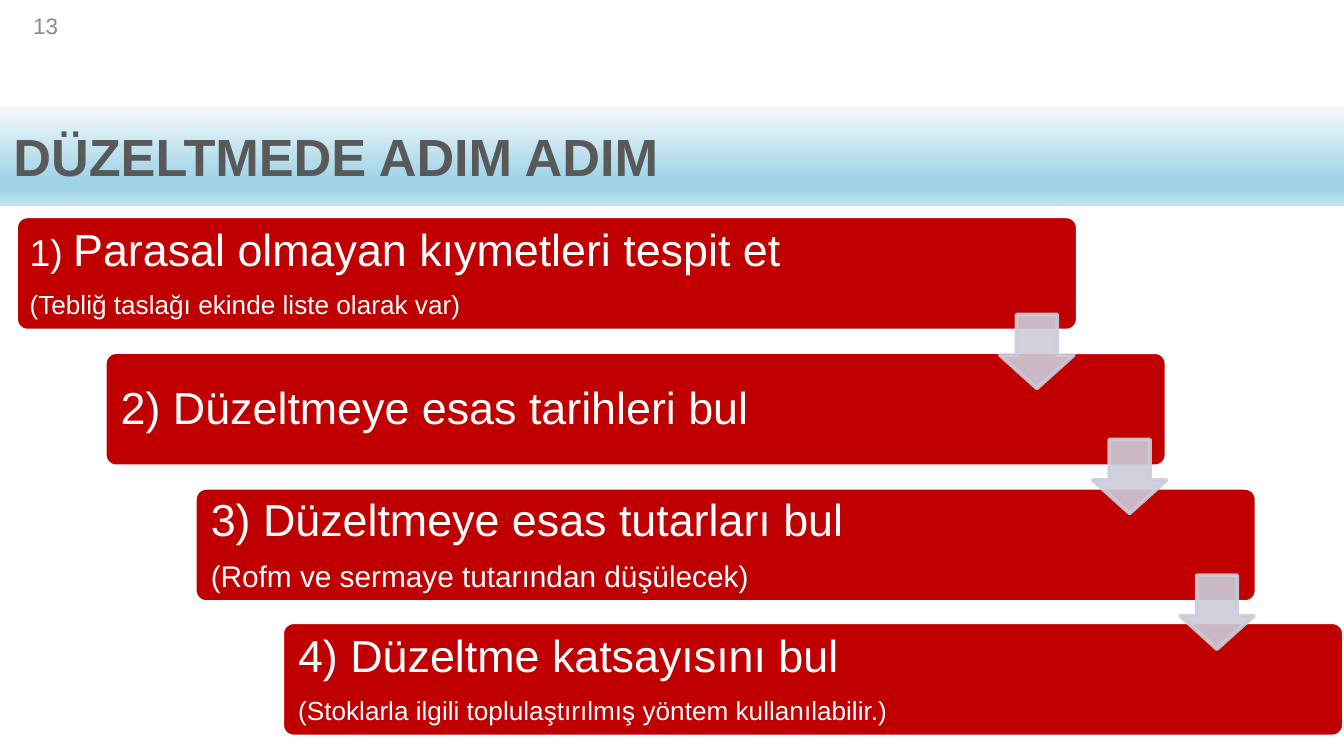
"""Builds a slide with four cascading correction steps joined by arrows."""
from pptx import Presentation
from pptx import util as u
from pptx.dml import color
from pptx.enum import shapes, text
from pptx.oxml import parse_xml
from pptx.oxml.ns import nsdecls, qn

COLORS = {"box": "C00000", "white": "FFFFFF", "arrow": "CCCDDB",
          "title": "595959", "number": "8C8C8C"}
BAND = [(0, "F4FAFC"), (74, "A0D3E6"), (83, "A0D3E6"), (100, "C0E2EE")]
STEPS = [
    (0.12, 1.61, 6.91, 0.08,
     [[("1) ", 20), ("Parasal olmayan kıymetleri tespit et", 24)],
      [("(Tebliğ taslağı ekinde liste olarak var)", 14)]]),
    (0.78, 2.62, 6.64, 0.1,
     [[("2) Düzeltmeye esas tarihleri bul", 24)]]),
    (1.45, 3.63, 6.64, 0.1,
     [[("3) Düzeltmeye esas tutarları bul", 24)],
      [("(Rofm ve sermaye tutarından düşülecek)", 16)]]),
    (2.1, 4.63, 6.64, 0.1,
     [[("4) Düzeltme katsayısını bul", 24)],
      [("(Stoklarla ilgili toplulaştırılmış yöntem kullanılabilir.)", 14)]]),
]
ARROWS = [(7.44, 2.34), (8.13, 3.27), (8.78, 4.28)]


class Deck:
    """Holds the style and the current slide."""

    def __init__(self, prs):
        self.font = "Arial"
        self.s = prs.slides.add_slide(prs.slide_layouts[5])

    def rgb(self, name):
        return color.RGBColor.from_string(COLORS[name])

    def style(self, font, size, name, bold=False):
        font.name, font.size, font.bold = self.font, u.Pt(size), bold
        font.color.rgb = self.rgb(name)

    def shape(self, kind, x, y, w, h, fill, line, adjustments):
        sp = self.s.shapes.add_shape(kind, *map(u.Inches, (x, y, w, h)))
        sp.shadow.inherit = False
        sp.fill.solid()
        sp.fill.fore_color.rgb = self.rgb(fill)
        sp.line.color.rgb = self.rgb(line)
        sp.line.width = u.Pt(2)
        for i, value in enumerate(adjustments):
            sp.adjustments[i] = value
        return sp

    def textbox(self, x, y, w, h):
        tf = self.s.shapes.add_textbox(*map(u.Inches, (x, y, w, h))).text_frame
        tf.word_wrap = True
        tf.vertical_anchor = text.MSO_ANCHOR.MIDDLE
        return tf

    def title(self, wording, x, y, w, h):
        sp = self.s.shapes.title
        sp.left, sp.top, sp.width, sp.height = map(u.Inches, (x, y, w, h))
        sp.fill.gradient()
        sp.fill.gradient_angle = 270
        stops = "".join(f'<a:gs pos="{pos * 1000}"><a:srgbClr val="{c}"/></a:gs>'
                        for pos, c in BAND)
        old = next(sp._element.spPr.iter(qn("a:gsLst")))
        old.getparent().replace(
            old, parse_xml(f'<a:gsLst {nsdecls("a")}>{stops}</a:gsLst>'))
        tf = sp.text_frame
        tf.text = wording
        tf.vertical_anchor = text.MSO_ANCHOR.MIDDLE
        p = tf.paragraphs[0]
        p.alignment = text.PP_ALIGN.LEFT
        self.style(p.font, 28, "title", True)

    def number(self, wording, x, y, w, h):
        p = self.textbox(x, y, w, h).paragraphs[0]
        p.text = wording
        p.alignment = text.PP_ALIGN.RIGHT
        self.style(p.font, 12, "number")

    def step(self, x, y, width, inset, lines):
        self.shape(shapes.MSO_SHAPE.ROUNDED_RECTANGLE, x, y, 7.9, 0.85,
                   "box", "white", [0.1])
        tf = self.textbox(x + 0.02, y + 0.03, width, 0.8)
        tf.margin_left = tf.margin_right = u.Inches(inset)
        tf.margin_top = tf.margin_bottom = u.Inches(inset)
        for i, runs in enumerate(lines):
            p = tf.add_paragraph() if i else tf.paragraphs[0]
            p.line_spacing = 0.9
            p.space_after = u.Pt(0.35 * runs[-1][1])
            for wording, size in runs:
                r = p.add_run()
                r.text = wording
                self.style(r.font, size, "white")

    def arrow(self, x, y):
        sp = self.shape(shapes.MSO_SHAPE.DOWN_ARROW, x, y, 0.55, 0.55,
                        "arrow", "arrow", [0.55, 0.45])
        for clr in sp._element.spPr.iter(qn("a:srgbClr")):
            clr.append(parse_xml(f'<a:alpha {nsdecls("a")} val="90000"/>'))


def main():
    prs = Presentation()
    prs.slide_width = u.Inches(10)
    prs.slide_height = prs.slide_width * 9 // 16
    deck = Deck(prs)
    for step in STEPS:
        deck.step(*step)
    for x, y in ARROWS:
        deck.arrow(x, y)
    deck.title("DÜZELTMEDE ADIM ADIM", 0, 0.79, 10, 0.74)
    deck.number("13", 0.04, 0.04, 0.49, 0.3)
    prs.save("out.pptx")


if __name__ == "__main__":
    main()
